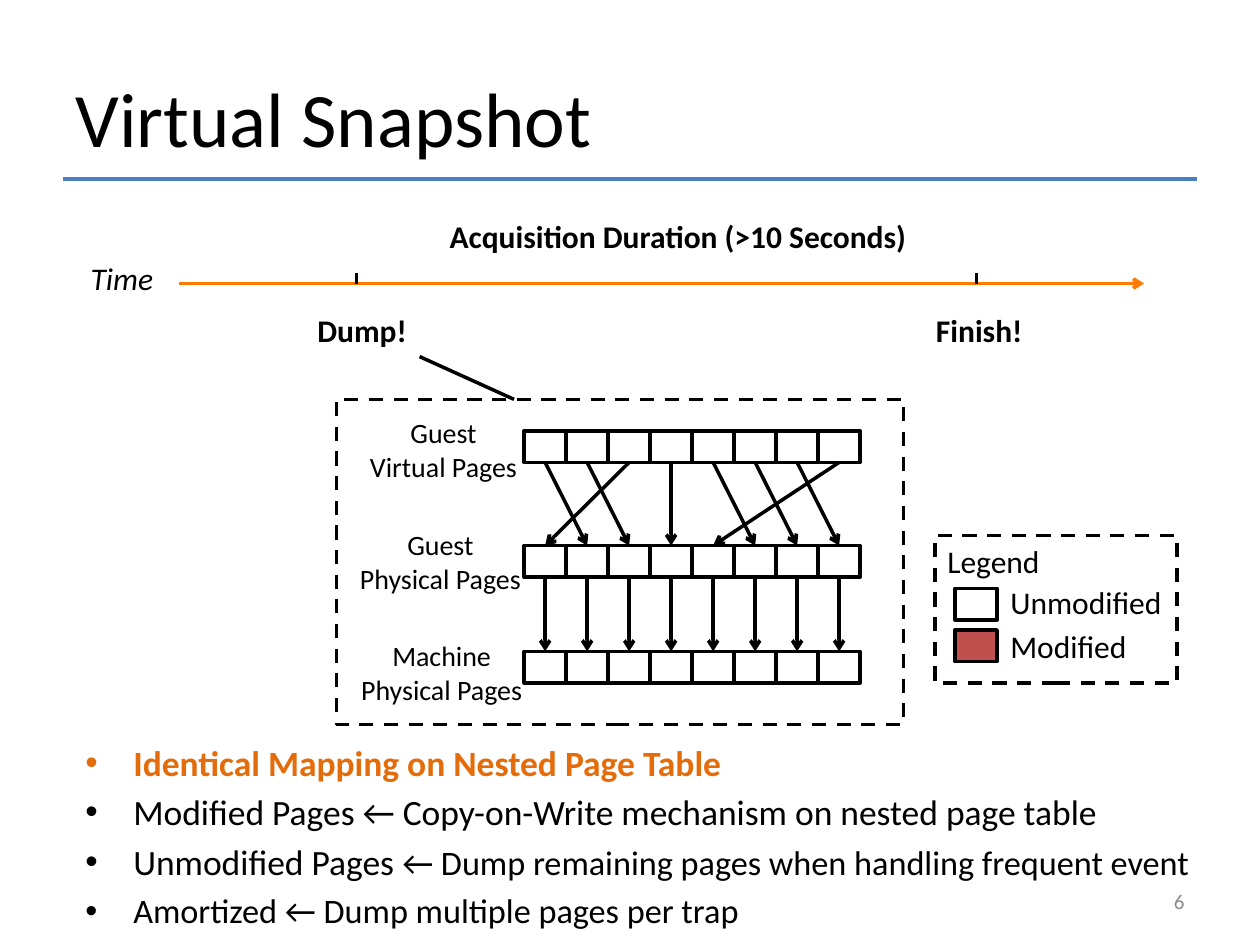
import pptx
import pptx.dml.color
import pptx.enum.dml
import pptx.enum.shapes
import pptx.enum.text
import pptx.oxml.ns
import pptx.util
from lxml import etree

Inches = pptx.util.Inches
Pt = pptx.util.Pt
RGBColor = pptx.dml.color.RGBColor
ALIGN = pptx.enum.text.PP_ALIGN
ANCHOR = pptx.enum.text.MSO_ANCHOR

BLACK = RGBColor(0x00, 0x00, 0x00)
BLUE = RGBColor(0x4B, 0x7E, 0xBC)
GRAY = RGBColor(0x8C, 0x8C, 0x8C)
TIME_ORANGE = RGBColor(0xFF, 0x7A, 0x00)
TEXT_ORANGE = RGBColor(0xE4, 0x6C, 0x0A)
RED = RGBColor(0xC0, 0x50, 0x4D)
FONT = "Calibri"

TIMELINE_Y = 2.25
TIMELINE_LABELS = [  # text, left, top, width, bold, italic
    ("Time", 0.62, 2.01, 0.71, False, True),
    ("Acquisition Duration (>10 Seconds)", 3.47, 1.67, 3.86, True, False),
    ("Dump!", 2.42, 2.42, 0.92, True, False),
    ("Finish!", 7.33, 2.42, 0.89, True, False),
]
TICKS = [2.83, 7.75]

PAGE_COUNT = 8
PAGE_LEFT, PAGE_WIDTH, PAGE_HEIGHT = 4.16, 1 / 3, 0.25
PAGE_ROWS = [  # label, label left, label top, label width, row top
    ("Guest\nVirtual Pages", 2.83, 3.25, 1.38, 3.42),
    ("Guest\nPhysical Pages", 2.75, 4.14, 1.49, 4.33),
    ("Machine\nPhysical Pages", 2.76, 5.02, 1.49, 5.17),
]
# For each row gap: the target page of every source page
MAPPINGS = [[1, 2, 0, 3, 5, 6, 7, 4], list(range(PAGE_COUNT))]

LEGEND = [  # label, label top, label width, swatch top, swatch fill
    ("Unmodified", 4.58, 1.42, 4.67, None),
    ("Modified", 4.93, 1.14, 5.0, RED),
]

BULLETS = [  # runs of (text, size), colour, bold
    ([("Identical Mapping on Nested Page Table", 20.3)], TEXT_ORANGE, True),
    ([("Modified Pages ← Copy-on-Write mechanism on nested page table", 20.3)], BLACK, False),
    ([("Unmodified Pages ", 20.3),
      ("← Dump remaining pages when handling frequent event", 19.6)], BLACK, False),
    ([("Amortized ← Dump multiple pages per trap", 19.6)], BLACK, False),
]


def style_run(run, size, color=BLACK, bold=False, italic=False):
    run.font.name = FONT
    run.font.size = Pt(size)
    run.font.color.rgb = color
    run.font.bold = bold
    run.font.italic = italic


def add_text(slide, text, box, size, color=BLACK, bold=False, italic=False,
             align=ALIGN.LEFT, anchor=ANCHOR.TOP, wrap=False):
    frame = slide.shapes.add_textbox(*map(Inches, box)).text_frame
    frame.word_wrap = wrap
    frame.vertical_anchor = anchor
    frame.text = text
    for paragraph in frame.paragraphs:
        paragraph.alignment = align
        for run in paragraph.runs:
            style_run(run, size, color, bold, italic)


def add_line(slide, start, end, color=BLACK, arrow=False):
    connector = slide.shapes.add_connector(
        pptx.enum.shapes.MSO_CONNECTOR.STRAIGHT, *map(Inches, start + end))
    connector.line.color.rgb = color
    connector.line.width = Pt(2)
    if arrow:
        line = connector.line._get_or_add_ln()
        etree.SubElement(line, pptx.oxml.ns.qn("a:tailEnd"), type="arrow")
    etree.SubElement(connector._element.spPr, pptx.oxml.ns.qn("a:effectLst"))


def add_rectangle(slide, box, fill=None, dashed=False):
    shape = slide.shapes.add_shape(
        pptx.enum.shapes.MSO_SHAPE.RECTANGLE, *map(Inches, box))
    shape.shadow.inherit = False
    if fill is None:
        shape.fill.background()
    else:
        shape.fill.solid()
        shape.fill.fore_color.rgb = fill
    shape.line.color.rgb = BLACK
    shape.line.width = Pt(2)
    if dashed:
        shape.line.dash_style = pptx.enum.dml.MSO_LINE.DASH
    return shape


def add_timeline(slide):
    add_line(slide, (1.42, TIMELINE_Y), (9.08, TIMELINE_Y), TIME_ORANGE, arrow=True)
    for x in TICKS:
        add_line(slide, (x, TIMELINE_Y - 0.08), (x, TIMELINE_Y))
    for text, left, top, width, bold, italic in TIMELINE_LABELS:
        add_text(slide, text, (left, top, width, 0.4), 18, bold=bold, italic=italic)


def add_page_mapping(slide):
    add_line(slide, (3.33, 2.83), (4.08, 3.17))
    add_rectangle(slide, (2.67, 3.17, 4.5, 2.58), dashed=True)
    for label, left, top, width, row_top in PAGE_ROWS:
        add_text(slide, label, (left, top, width, 0.64), 16, align=ALIGN.CENTER)
        for page in range(PAGE_COUNT):
            add_rectangle(slide, (PAGE_LEFT + page * PAGE_WIDTH, row_top,
                                  PAGE_WIDTH, PAGE_HEIGHT))
    centers = [PAGE_LEFT + (page + 0.5) * PAGE_WIDTH for page in range(PAGE_COUNT)]
    row_tops = [row[-1] for row in PAGE_ROWS]
    for upper, lower, targets in zip(row_tops, row_tops[1:], MAPPINGS):
        for source, target in enumerate(targets):
            add_line(slide, (centers[source], upper + PAGE_HEIGHT),
                     (centers[target], lower), arrow=True)


def add_legend(slide):
    frame = add_rectangle(slide, (7.42, 4.25, 1.92, 1.17), dashed=True).text_frame
    frame.text = "Legend"
    frame.vertical_anchor = ANCHOR.TOP
    frame.paragraphs[0].alignment = ALIGN.LEFT
    style_run(frame.paragraphs[0].runs[0], 18)
    for label, top, width, swatch_top, fill in LEGEND:
        add_rectangle(slide, (7.58, swatch_top, PAGE_WIDTH, PAGE_HEIGHT), fill)
        add_text(slide, label, (7.92, top, width, 0.4), 18)


def add_bullets(slide):
    box = map(Inches, (0.58, 5.83, 9.42, 1.67))
    frame = slide.shapes.add_textbox(*box).text_frame
    frame.word_wrap = True
    for index, (runs, color, bold) in enumerate(BULLETS):
        paragraph = frame.add_paragraph() if index else frame.paragraphs[0]
        paragraph.space_before = Pt(4)
        for text, size in runs:
            run = paragraph.add_run()
            run.text = text
            style_run(run, size, color, bold)
        properties = paragraph._p.get_or_add_pPr()
        properties.set("marL", str(Inches(0.38)))
        properties.set("indent", str(Inches(-0.38)))
        etree.SubElement(properties, pptx.oxml.ns.qn("a:buFont"), typeface="Arial")
        etree.SubElement(properties, pptx.oxml.ns.qn("a:buChar"), char="•")


def main():
    presentation = pptx.Presentation()
    presentation.slide_width = Inches(10)
    presentation.slide_height = Inches(7.5)
    slide = presentation.slides.add_slide(presentation.slide_layouts[6])

    add_line(slide, (0.5, 1.42), (9.5, 1.42), BLUE)
    add_text(slide, "Virtual Snapshot", (0.5, 0.3, 9, 1.25), 44,
             anchor=ANCHOR.MIDDLE, wrap=True)
    add_text(slide, "6", (7.17, 6.95, 2.33, 0.4), 12, GRAY,
             align=ALIGN.RIGHT, anchor=ANCHOR.MIDDLE, wrap=True)
    add_timeline(slide)
    add_page_mapping(slide)
    add_legend(slide)
    add_bullets(slide)
    presentation.save("out.pptx")


if __name__ == "__main__":
    main()
